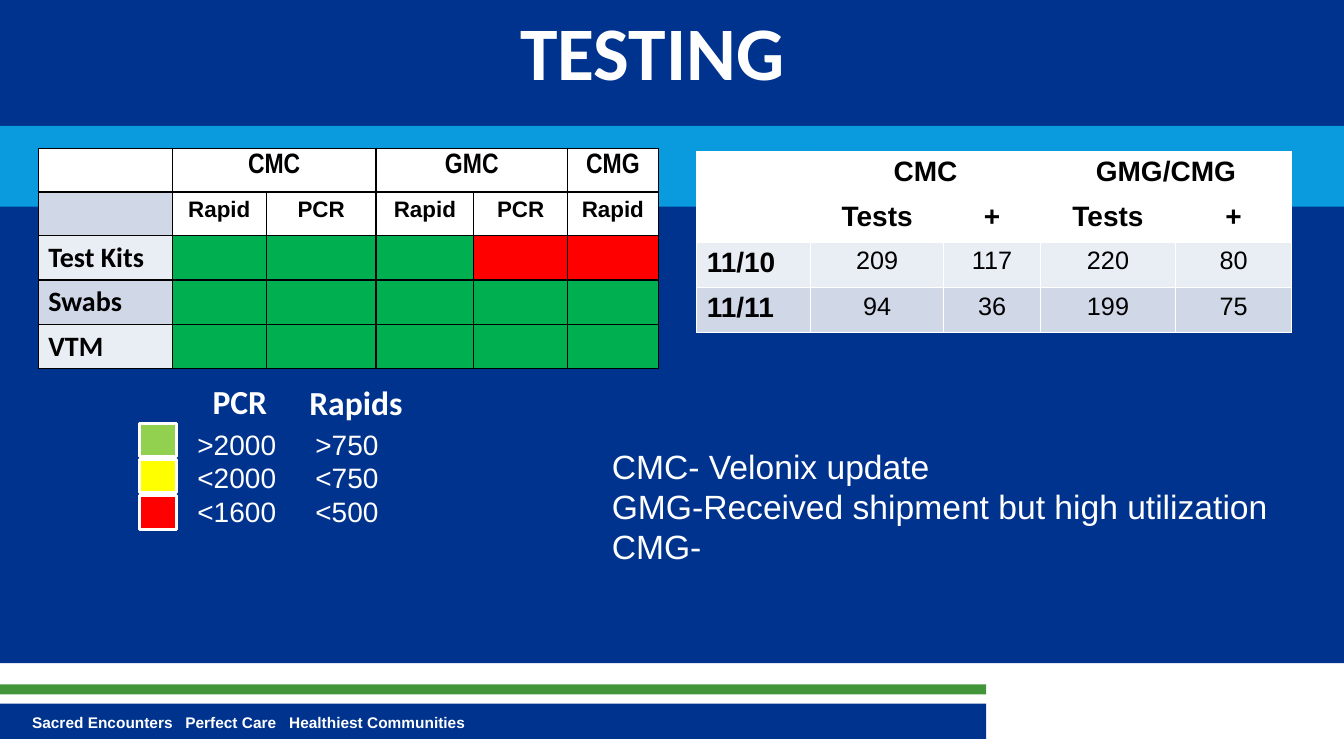
"""Build the TESTING status slide with supply and result tables."""
from dataclasses import dataclass, field
from typing import Optional

from lxml.etree import SubElement
from pptx import Presentation
from pptx.dml.color import RGBColor
from pptx.enum.shapes import MSO_SHAPE
from pptx.enum.text import MSO_ANCHOR, MSO_AUTO_SIZE, PP_ALIGN
from pptx.oxml.ns import qn
from pptx.util import Inches, Pt


@dataclass(frozen=True)
class Theme:
    navy: str = "00338E"
    sky: str = "099BDD"
    leaf: str = "439539"
    white: str = "FFFFFF"
    black: str = "000000"
    pale: str = "E9EDF4"
    dusk: str = "D0D8E8"
    stocked: str = "00B050"
    ample: str = "92D050"
    low: str = "FFFF00"
    short: str = "FF0000"
    title: int = 54
    heading: int = 24
    label: int = 20
    value: int = 18
    caption: int = 16
    footer: int = 11


THEME = Theme()


@dataclass(frozen=True)
class Style:
    size: int
    name: str = "Arial"
    color: str = THEME.white
    bold: bool = False
    align: PP_ALIGN = PP_ALIGN.LEFT


@dataclass(frozen=True)
class Block:
    left: float
    top: float
    width: float
    height: float
    fill: str
    line: Optional[str] = None


@dataclass(frozen=True)
class Note:
    left: float
    top: float
    width: float
    height: float
    lines: list[str]
    style: Style
    space_after: float = 0
    wrap: bool = True
    tabs: list[float] = field(default_factory=list)


@dataclass(frozen=True)
class Cell:
    text: str
    fill: str
    style: Optional[Style] = None


@dataclass(frozen=True)
class Grid:
    left: float
    top: float
    height: float
    columns: list[float]
    rows: list[list[Cell]]
    merges: list[int]
    border: str
    header_rule: float = 1


def write(paragraph, text: str, style: Style) -> None:
    paragraph.text = text
    paragraph.alignment = style.align
    formats = {"size": Pt(style.size), "name": style.name, "bold": style.bold}
    for attribute, setting in formats.items():
        setattr(paragraph.font, attribute, setting)
    paragraph.font.color.rgb = RGBColor.from_string(style.color)


def draw_block(slide, block: Block) -> None:
    shape = slide.shapes.add_shape(
        MSO_SHAPE.RECTANGLE, Inches(block.left), Inches(block.top),
        Inches(block.width), Inches(block.height))
    shape.shadow.inherit = False
    shape.fill.solid()
    shape.fill.fore_color.rgb = RGBColor.from_string(block.fill)
    if block.line:
        shape.line.color.rgb = RGBColor.from_string(block.line)
        shape.line.width = Pt(2)
    else:
        shape.line.fill.background()


def draw_note(slide, note: Note) -> None:
    frame = slide.shapes.add_textbox(
        Inches(note.left), Inches(note.top),
        Inches(note.width), Inches(note.height)).text_frame
    formats = {"word_wrap": note.wrap, "auto_size": MSO_AUTO_SIZE.SHAPE_TO_FIT_TEXT}
    for attribute, setting in formats.items():
        setattr(frame, attribute, setting)
    for index, line in enumerate(note.lines):
        paragraph = frame.add_paragraph() if index else frame.paragraphs[0]
        paragraph.space_after = Pt(note.space_after)
        if note.tabs:
            stops = SubElement(paragraph._p.get_or_add_pPr(), qn("a:tabLst"))
            for stop in note.tabs:
                SubElement(stops, qn("a:tab"), pos=str(Inches(stop)), algn="l")
        write(paragraph, line, note.style)


def draw_borders(cell, color: str, bottom: float) -> None:
    properties = cell._tc.get_or_add_tcPr()
    for side, width in {"L": 1, "R": 1, "T": 1, "B": bottom}.items():
        line = SubElement(properties, qn(f"a:ln{side}"), w=str(Pt(width)))
        SubElement(SubElement(line, qn("a:solidFill")), qn("a:srgbClr"), val=color)


def draw_grid(slide, grid: Grid) -> None:
    table = slide.shapes.add_table(
        len(grid.rows), len(grid.columns), Inches(grid.left), Inches(grid.top),
        Inches(sum(grid.columns)), Inches(grid.height)).table
    for attribute, setting in {"first_row": False, "horz_banding": False}.items():
        setattr(table, attribute, setting)
    for column, width in zip(table.columns, grid.columns):
        column.width = Inches(width)
    for r, row in enumerate(grid.rows):
        for c, entry in enumerate(row):
            cell = table.cell(r, c)
            draw_borders(cell, grid.border, 1 if r else grid.header_rule)
            cell.fill.solid()
            cell.fill.fore_color.rgb = RGBColor.from_string(entry.fill)
            if entry.style:
                write(cell.text_frame.paragraphs[0], entry.text, entry.style)
    for c in grid.merges:
        table.cell(0, c).merge(table.cell(0, c + 1))


def header(texts: list[str], style: Style) -> list[Cell]:
    return [Cell(text, THEME.white, style if text else None) for text in texts]


def supply_grid() -> Grid:
    site = Style(THEME.label, "Arial Narrow", THEME.black, True, PP_ALIGN.CENTER)
    kind = Style(THEME.caption, "Arial", THEME.black, True, PP_ALIGN.CENTER)
    item = Style(THEME.label, "Calibri", THEME.black, True)
    rows = [header(["", "CMC", "", "GMC", "", "CMG"], site),
            [Cell("", THEME.dusk)] + header(["Rapid", "PCR", "Rapid", "PCR", "Rapid"], kind)]
    supplies = [("Test Kits", THEME.pale, 2), ("Swabs", THEME.dusk, 0), ("VTM", THEME.pale, 0)]
    for name, fill, shortages in supplies:
        levels = [THEME.stocked] * (5 - shortages) + [THEME.short] * shortages
        rows.append([Cell(name, fill, item)] + [Cell("", level) for level in levels])
    return Grid(0.38, 1.47, 2.17, [1.33, 0.93, 1.09, 0.97, 0.93, 0.9],
                rows, [1, 3], THEME.black)


def result_grid() -> Grid:
    heading = Style(THEME.label, color=THEME.black, bold=True, align=PP_ALIGN.CENTER)
    day = Style(THEME.label, color=THEME.black, bold=True)
    count = Style(THEME.value, color=THEME.black, align=PP_ALIGN.CENTER)
    rows = [header(["", "CMC", "", "GMG/CMG", ""], heading),
            header(["", "Tests", "+", "Tests", "+"], heading)]
    results = [("11/10", THEME.pale, [209, 117, 220, 80]),
               ("11/11", THEME.dusk, [94, 36, 199, 75])]
    for date, fill, counts in results:
        rows.append([Cell(date, fill, day)] + [Cell(str(n), fill, count) for n in counts])
    return Grid(6.91, 1.5, 1.8, [1.13, 1.32, 0.96, 1.34, 1.15],
                rows, [1, 3], THEME.white, 3)


def main() -> None:
    deck = Presentation()
    deck.slide_width, deck.slide_height = Inches(13.33), Inches(7.5)
    slide = deck.slides.add_slide(deck.slide_layouts[5])

    for block in [Block(0, 0, 13.33, 6.58, THEME.navy),
                  Block(-0.03, 6.98, 9.81, 0.35, THEME.navy),
                  Block(-0.03, 6.79, 9.81, 0.1, THEME.leaf)]:
        draw_block(slide, block)
    draw_note(slide, Note(
        0.22, 7.03, 8.33, 0.29, ["Sacred Encounters\tPerfect Care\tHealthiest Communities"],
        Style(THEME.footer, bold=True), space_after=0.5, tabs=[1.52, 2.55]))

    title = slide.shapes.title
    title.element.getparent().append(title.element)
    place = {"left": 1.12, "top": 0, "width": 10.7, "height": 1.65}
    for attribute, length in place.items():
        setattr(title, attribute, Inches(length))
    title.text_frame.vertical_anchor = MSO_ANCHOR.TOP
    write(title.text_frame.paragraphs[0], "TESTING",
          Style(THEME.title, "Calibri", bold=True, align=PP_ALIGN.CENTER))

    draw_block(slide, Block(0, 1.25, 13.33, 0.8, THEME.sky))
    for grid in (supply_grid(), result_grid()):
        draw_grid(slide, grid)
    for step, level in enumerate([THEME.ample, THEME.low, THEME.short]):
        draw_block(slide, Block(1.38, 4.2 + 0.36 * step, 0.37, 0.33, level, THEME.white))
    key = Style(THEME.heading, "Calibri", bold=True)
    for note in [
        Note(5.97, 4.37, 7.23, 1.31, ["CMC- Velonix update",
             "GMG-Received shipment but high utilization", "CMG-"],
             Style(THEME.heading)),
        Note(1.86, 4.19, 5.63, 1.11, [">2000\t>750", "<2000\t<750", "<1600\t<500"],
             Style(THEME.label), tabs=[1.17]),
        Note(2.01, 3.73, 0.75, 0.5, ["PCR"], key, wrap=False),
        Note(2.97, 3.74, 1.14, 0.5, ["Rapids"], key, wrap=False),
    ]:
        draw_note(slide, note)
    deck.save("out.pptx")


if __name__ == "__main__":
    main()
